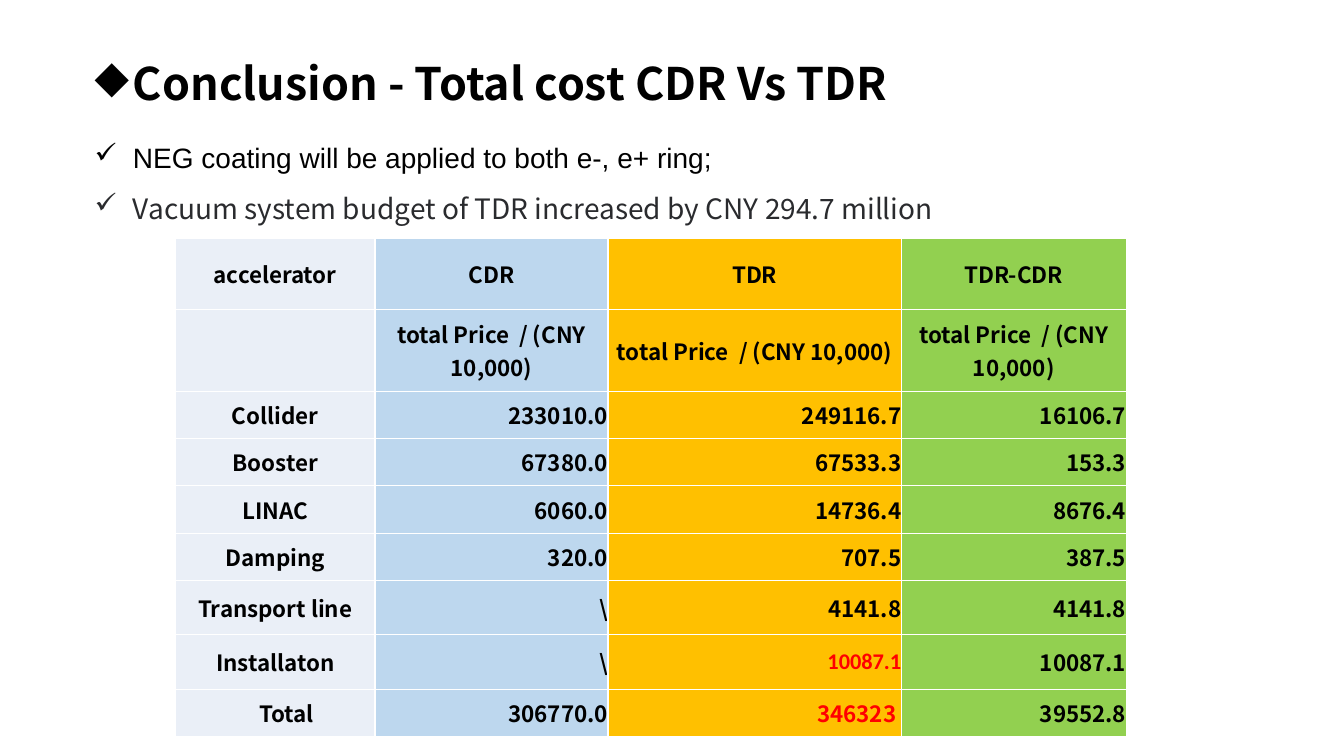
from dataclasses import dataclass

from lxml.etree import SubElement
from pptx import Presentation
from pptx.dml.color import RGBColor
from pptx.enum.text import MSO_ANCHOR, MSO_AUTO_SIZE, PP_ALIGN
from pptx.oxml.ns import qn
from pptx.slide import Slide
from pptx.table import _Cell
from pptx.util import Inches, Pt

BLACK = RGBColor(0x00, 0x00, 0x00)
CHARCOAL = RGBColor(0x2A, 0x2B, 0x2E)
RED = RGBColor(0xFF, 0x00, 0x00)
PALE_BLUE = RGBColor(0xEA, 0xEF, 0xF7)
LIGHT_BLUE = RGBColor(0xBD, 0xD7, 0xEE)
AMBER = RGBColor(0xFF, 0xC0, 0x00)
GREEN = RGBColor(0x92, 0xD0, 0x50)
SANS = "Noto Sans CJK SC"


@dataclass(frozen=True)
class TextStyle:
    size: int = 16
    font: str = SANS
    color: RGBColor = BLACK
    bold: bool = True


@dataclass(frozen=True)
class BulletItem:
    text: str
    bullet: str
    style: TextStyle
    line_spacing: float = 1.0


@dataclass(frozen=True)
class CostColumn:
    width: float
    fill: RGBColor


COLUMNS = [
    CostColumn(1.98, PALE_BLUE),
    CostColumn(2.31, LIGHT_BLUE),
    CostColumn(2.91, AMBER),
    CostColumn(2.23, GREEN),
]
ROW_HEIGHTS = [0.7, 0.81, 0.47, 0.47, 0.47, 0.47, 0.54, 0.54, 0.47]
HEADER_ROWS = 2
PRICE_UNIT = "total Price  / (CNY 10,000)"
COSTS = [
    ["accelerator", "CDR", "TDR", "TDR-CDR"],
    ["", PRICE_UNIT, PRICE_UNIT, PRICE_UNIT],
    ["Collider", "233010.0", "249116.7", "16106.7"],
    ["Booster", "67380.0", "67533.3", "153.3"],
    ["LINAC", "6060.0", "14736.4", "8676.4"],
    ["Damping", "320.0", "707.5", "387.5"],
    ["Transport line", "\\", "4141.8", "4141.8"],
    ["Installaton", "\\", "10087.1", "10087.1"],
    ["　Total", "306770.0", "346323 ", "39552.8"],
]
CELL_STYLE = TextStyle()
HIGHLIGHTS = {
    (7, 2): TextStyle(font="Calibri", color=RED),
    (8, 2): TextStyle(color=RED),
}

TITLE = [BulletItem("Conclusion - Total cost CDR Vs TDR", "◆", TextStyle(32))]
FINDINGS = [
    BulletItem("NEG coating will be applied to both e-, e+ ring;", "✓",
               TextStyle(20, "Arial", BLACK, False), 1.5),
    BulletItem("Vacuum system budget of TDR increased by CNY 294.7 million", "✓",
               TextStyle(20, SANS, CHARCOAL, False), 1.5),
]


def apply_style(paragraph, style: TextStyle) -> None:
    font = paragraph.font
    font.size = Pt(style.size)
    font.name = style.font
    font.bold = style.bold
    font.color.rgb = style.color


def add_bullets(slide: Slide, left: float, top: float, width: float,
                height: float, items: list[BulletItem]) -> None:
    box = slide.shapes.add_textbox(
        Inches(left), Inches(top), Inches(width), Inches(height))
    frame = box.text_frame
    frame.word_wrap = True
    frame.auto_size = MSO_AUTO_SIZE.SHAPE_TO_FIT_TEXT
    for index, item in enumerate(items):
        paragraph = frame.add_paragraph() if index else frame.paragraphs[0]
        paragraph.text = item.text
        paragraph.line_spacing = item.line_spacing
        properties = paragraph._p.get_or_add_pPr()
        properties.set("marL", str(Inches(0.38)))
        properties.set("indent", str(Inches(-0.38)))
        SubElement(properties, qn("a:buChar"), char=item.bullet)
        apply_style(paragraph, item.style)


def add_white_borders(cell: _Cell) -> None:
    properties = cell._tc.get_or_add_tcPr()
    for side in ("lnL", "lnR", "lnT", "lnB"):
        line = SubElement(properties, qn(f"a:{side}"), w=str(Pt(1)))
        fill = SubElement(line, qn("a:solidFill"))
        SubElement(fill, qn("a:srgbClr"), val="FFFFFF")


def fill_cell(cell: _Cell, text: str, fill: RGBColor,
              alignment: PP_ALIGN, style: TextStyle) -> None:
    add_white_borders(cell)
    cell.fill.solid()
    cell.fill.fore_color.rgb = fill
    cell.margin_left = cell.margin_right = cell.margin_top = cell.margin_bottom = 0
    cell.vertical_anchor = MSO_ANCHOR.MIDDLE
    paragraph = cell.text_frame.paragraphs[0]
    paragraph.text = text
    paragraph.alignment = alignment
    apply_style(paragraph, style)


def add_cost_table(slide: Slide) -> None:
    width = sum(column.width for column in COLUMNS)
    table = slide.shapes.add_table(
        len(COSTS), len(COLUMNS), Inches(1.74), Inches(2.37),
        Inches(width), Inches(sum(ROW_HEIGHTS))).table
    for index, column in enumerate(COLUMNS):
        table.columns[index].width = Inches(column.width)
    for row, (height, texts) in enumerate(zip(ROW_HEIGHTS, COSTS)):
        table.rows[row].height = Inches(height)
        for index, (column, text) in enumerate(zip(COLUMNS, texts)):
            is_label = row < HEADER_ROWS or index == 0
            alignment = PP_ALIGN.CENTER if is_label else PP_ALIGN.RIGHT
            style = HIGHLIGHTS.get((row, index), CELL_STYLE)
            fill_cell(table.cell(row, index), text, column.fill, alignment, style)


def main() -> None:
    presentation = Presentation()
    presentation.slide_width = Inches(13.33)
    presentation.slide_height = Inches(7.5)
    slide = presentation.slides.add_slide(presentation.slide_layouts[6])
    add_cost_table(slide)
    add_bullets(slide, 0.84, 1.18, 9.03, 1.06, FINDINGS)
    add_bullets(slide, 0.84, 0.5, 8.59, 0.64, TITLE)
    presentation.save("out.pptx")


if __name__ == "__main__":
    main()
